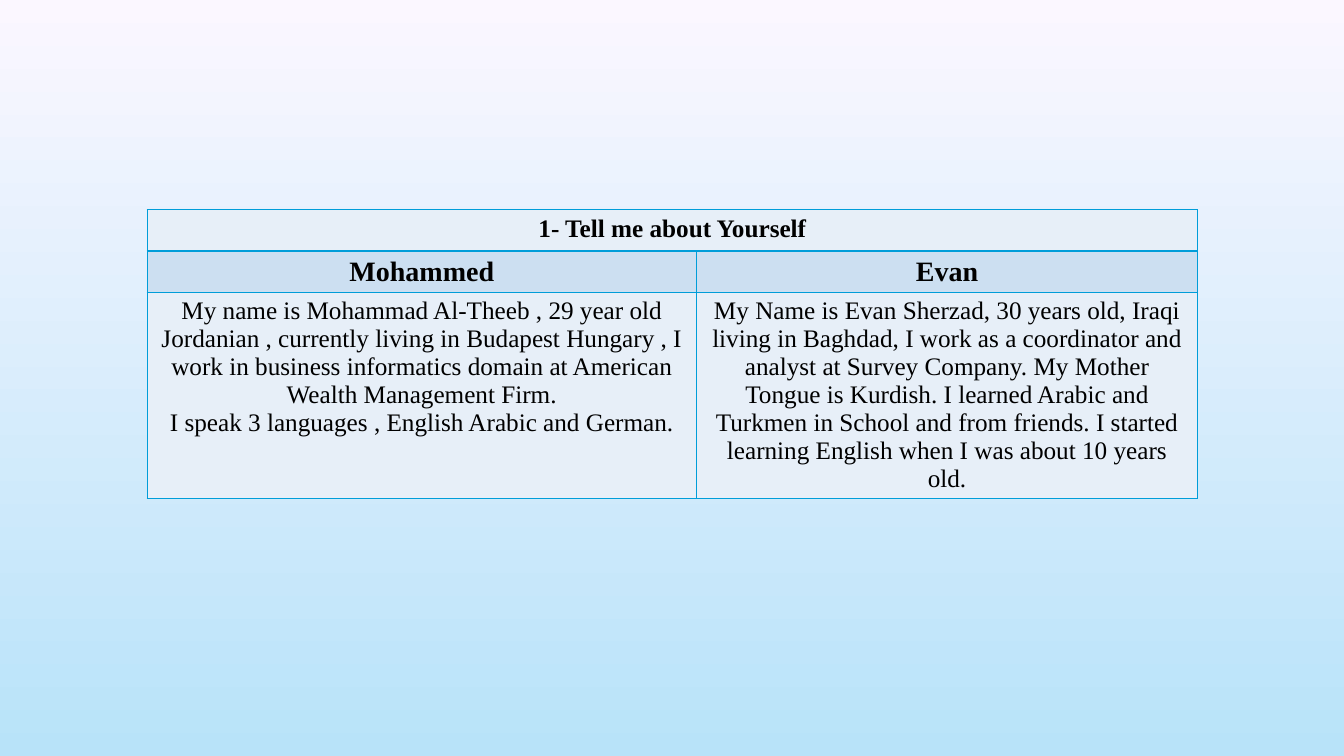
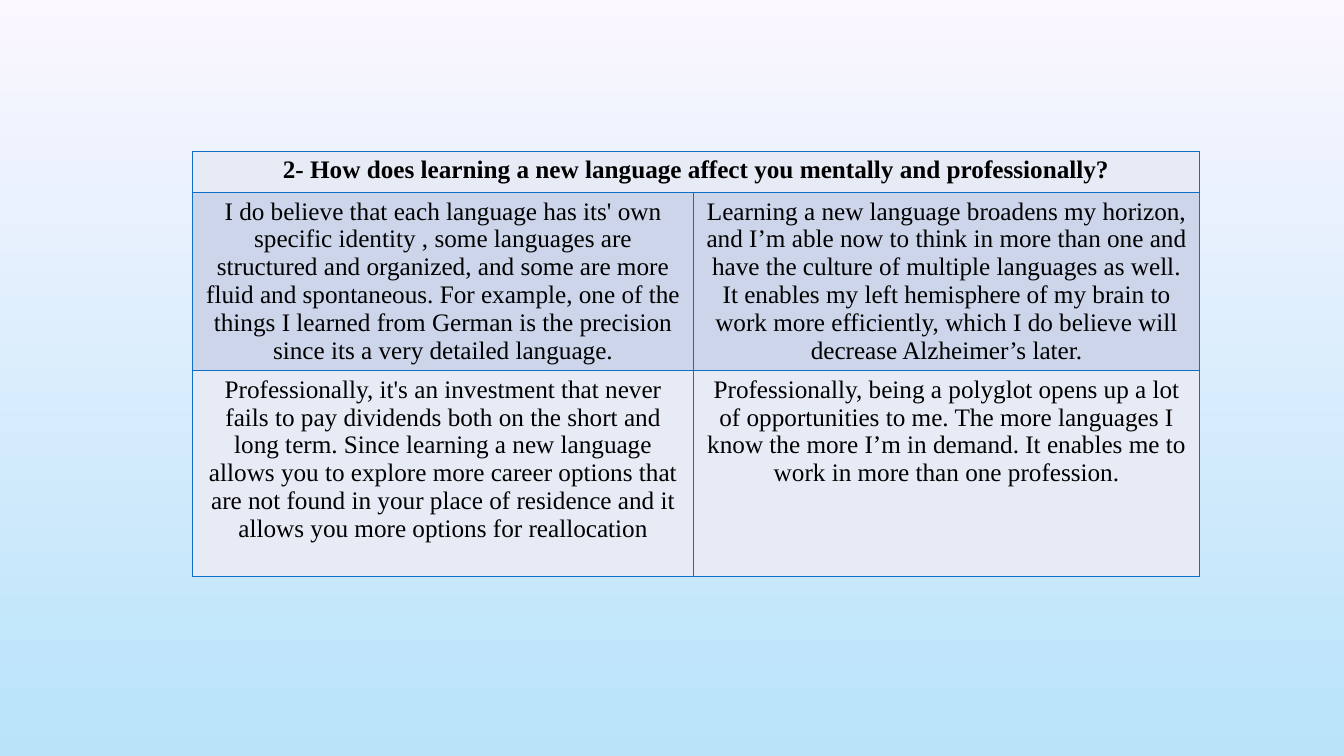
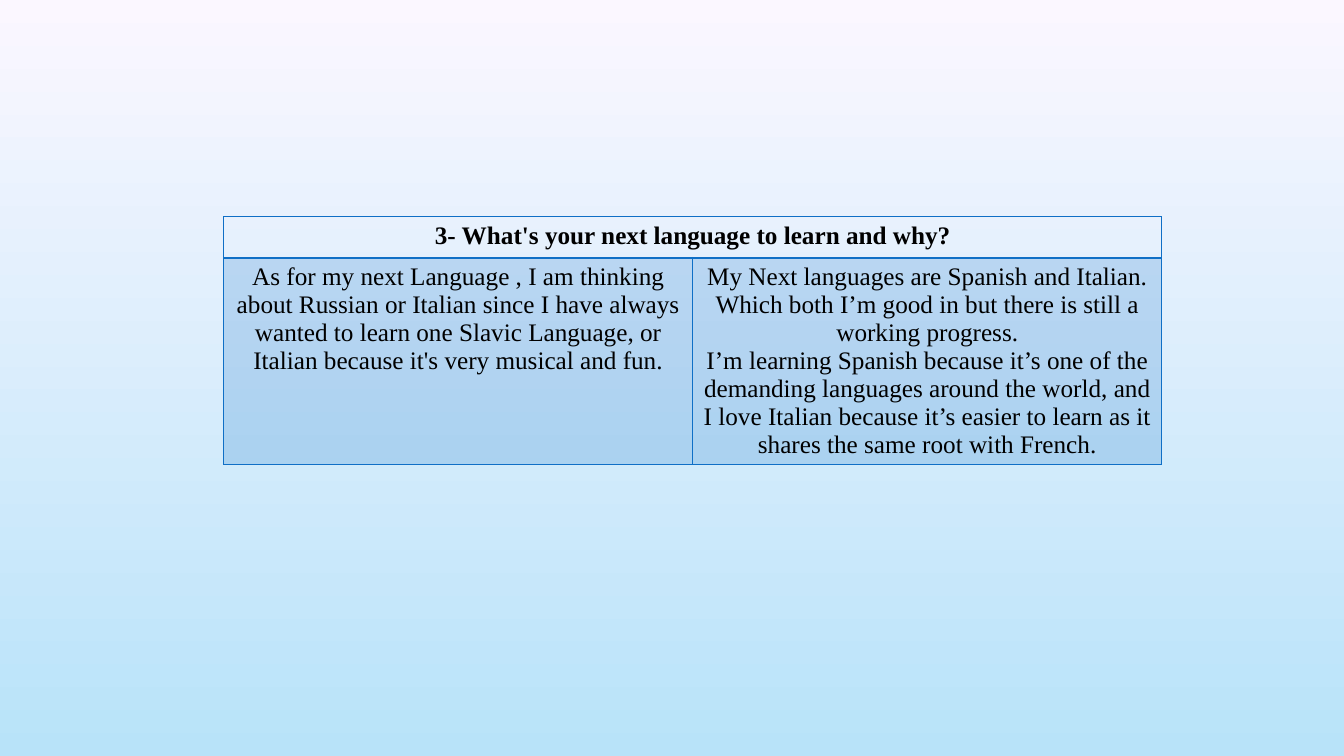
from dataclasses import dataclass

from lxml import etree
from pptx import Presentation
from pptx.dml.color import RGBColor
from pptx.enum.text import PP_ALIGN
from pptx.oxml.ns import qn
from pptx.util import Inches, Pt

CENTER = PP_ALIGN.CENTER
BLANK_LAYOUT = 6


@dataclass(frozen=True)
class Theme:
    font: str = "Times New Roman"
    text: str = "000000"
    sky_top: str = "FBF7FF"
    sky_bottom: str = "B8E3F9"
    cyan: str = "009DD9"
    blue: str = "0F6FC6"
    pale_cyan: str = "E7EFF8"
    soft_cyan: str = "CCDFF1"
    pale_blue: str = "E7EBF5"
    soft_blue: str = "CCD5EA"
    body_size: int = 18
    name_size: int = 20
    line_height: int = 20
    rule: int = 1
    heavy_rule: int = 2


THEME = Theme()
WIDTH, HEIGHT = Inches(13.33), Inches(7.5)
MIN_ROW = Inches(0.41)
ROW_PADDING = Inches(0.1)


@dataclass
class Row:
    """One table row: its texts, its height in text lines and its look."""
    texts: list
    lines: int = 1
    fill: str | None = None
    alpha: int = 100
    size: int = THEME.body_size
    bold: bool = False

    def height(self):
        return max(MIN_ROW, ROW_PADDING + self.lines * Pt(THEME.line_height))


def across(percent):
    return round(WIDTH * percent / 100)


def down(percent):
    return round(HEIGHT * percent / 100)


# Shared background
def paint_background(master):
    fill = master.background.fill
    fill.gradient()
    fill.gradient_angle = 270
    for stop, color in zip(fill.gradient_stops, (THEME.sky_top, THEME.sky_bottom)):
        stop.color.rgb = RGBColor.from_string(color)


# Table cells
def set_borders(cell, color, widths):
    properties = cell._tc.get_or_add_tcPr()
    for side, width in widths.items():
        line = etree.SubElement(properties, qn(f"a:ln{side}"), w=str(Pt(width)))
        solid = etree.SubElement(line, qn("a:solidFill"))
        etree.SubElement(solid, qn("a:srgbClr"), val=color)


def set_fill(cell, color, alpha):
    if color is None:
        cell.fill.background()
        return
    cell.fill.solid()
    cell.fill.fore_color.rgb = RGBColor.from_string(color)
    if alpha < 100:
        value = cell._tc.tcPr.find(f"{qn('a:solidFill')}/{qn('a:srgbClr')}")
        etree.SubElement(value, qn("a:alpha"), val=str(alpha * 1000))


def write_cell(cell, text, row):
    cell.text = text
    for paragraph in cell.text_frame.paragraphs:
        paragraph.alignment = CENTER
        font = paragraph.font
        font.name, font.size, font.bold = THEME.font, Pt(row.size), row.bold
        font.color.rgb = RGBColor.from_string(THEME.text)


# Question table: a merged heading above two columns of answers
def add_question(presentation, left, top, columns, rows, border,
                 heading_rule=THEME.rule):
    slide = presentation.slides.add_slide(presentation.slide_layouts[BLANK_LAYOUT])
    table = slide.shapes.add_table(
        len(rows), len(columns), across(left), down(top),
        across(sum(columns)), sum(row.height() for row in rows)).table
    table.first_row = table.horz_banding = False
    for column, width in zip(table.columns, columns):
        column.width = across(width)
    for index, row in enumerate(rows):
        table.rows[index].height = row.height()
        widths = dict.fromkeys("LRTB", THEME.rule)
        if index < 2:
            widths["B" if index == 0 else "T"] = heading_rule
        for cell in table.rows[index].cells:
            set_borders(cell, border, widths)
            set_fill(cell, row.fill, row.alpha)
        for cell, text in zip(table.rows[index].cells, row.texts):
            write_cell(cell, text, row)
    table.cell(0, 0).merge(table.cell(0, len(columns) - 1))


def main():
    presentation = Presentation()
    presentation.slide_width, presentation.slide_height = WIDTH, HEIGHT
    paint_background(presentation.slide_master)

    # Introductions
    add_question(presentation, 10.95, 27.73, (40.88, 37.28), [
        Row(["1- Tell me about Yourself"], fill=THEME.pale_cyan, bold=True),
        Row(["Mohammed", "Evan"], fill=THEME.soft_cyan,
            size=THEME.name_size, bold=True),
        Row(["My name is Mohammad Al-Theeb , 29 year old Jordanian , currently "
             "living in Budapest Hungary , I work in business informatics domain "
             "at American Wealth Management Firm.\n"
             "I speak 3 languages , English Arabic and German.",
             "My Name is Evan Sherzad, 30 years old, Iraqi living in Baghdad, "
             "I work as a coordinator and analyst at Survey Company. My Mother "
             "Tongue is Kurdish. I learned Arabic and Turkmen in School and from "
             "friends. I started learning English when I was about 10 years old."],
            lines=7, fill=THEME.pale_cyan),
    ], THEME.cyan)

    # Effects of learning a language
    add_question(presentation, 14.33, 20, (37.28, 37.65), [
        Row(["2- How does learning a new language affect you mentally and "
             "professionally?"], fill=THEME.pale_blue, bold=True),
        Row(["I do believe that each language has its' own specific identity , "
             "some languages are structured and organized, and some are more "
             "fluid and spontaneous. For example, one of the things I learned "
             "from German is the precision since its a very detailed language.",
             "Learning a new language broadens my horizon, and I’m able now to "
             "think in more than one and have the culture of multiple languages "
             "as well. It enables my left hemisphere of my brain to work more "
             "efficiently, which I do believe will decrease Alzheimer’s later."],
            lines=6, fill=THEME.soft_blue),
        Row(["Professionally, it's an investment that never fails to pay "
             "dividends both on the short and long term. Since learning a new "
             "language allows you to explore more career options that are not "
             "found in your place of residence and it allows you more options "
             "for reallocation",
             "Professionally, being a polyglot opens up a lot of opportunities "
             "to me. The more languages I know the more I’m in demand. It "
             "enables me to work in more than one profession."],
            lines=7, fill=THEME.pale_blue),
    ], THEME.blue)

    # Next language
    add_question(presentation, 16.65, 28.67, (34.9, 34.9), [
        Row(["3- What's your next language to learn and why?"], bold=True),
        Row(["As for my next Language , I am thinking about Russian or Italian "
             "since I have always wanted to learn one Slavic Language, or Italian "
             "because it's very musical and fun.",
             "My Next languages are Spanish and Italian. Which both I’m good in "
             "but there is still a working progress.\n"
             "I’m learning Spanish because it’s one of the demanding languages "
             "around the world, and I love Italian because it’s easier to learn "
             "as it shares the same root with French."],
            lines=7, fill=THEME.blue, alpha=20),
    ], THEME.blue, heading_rule=THEME.heavy_rule)

    presentation.save("out.pptx")


if __name__ == "__main__":
    main()
